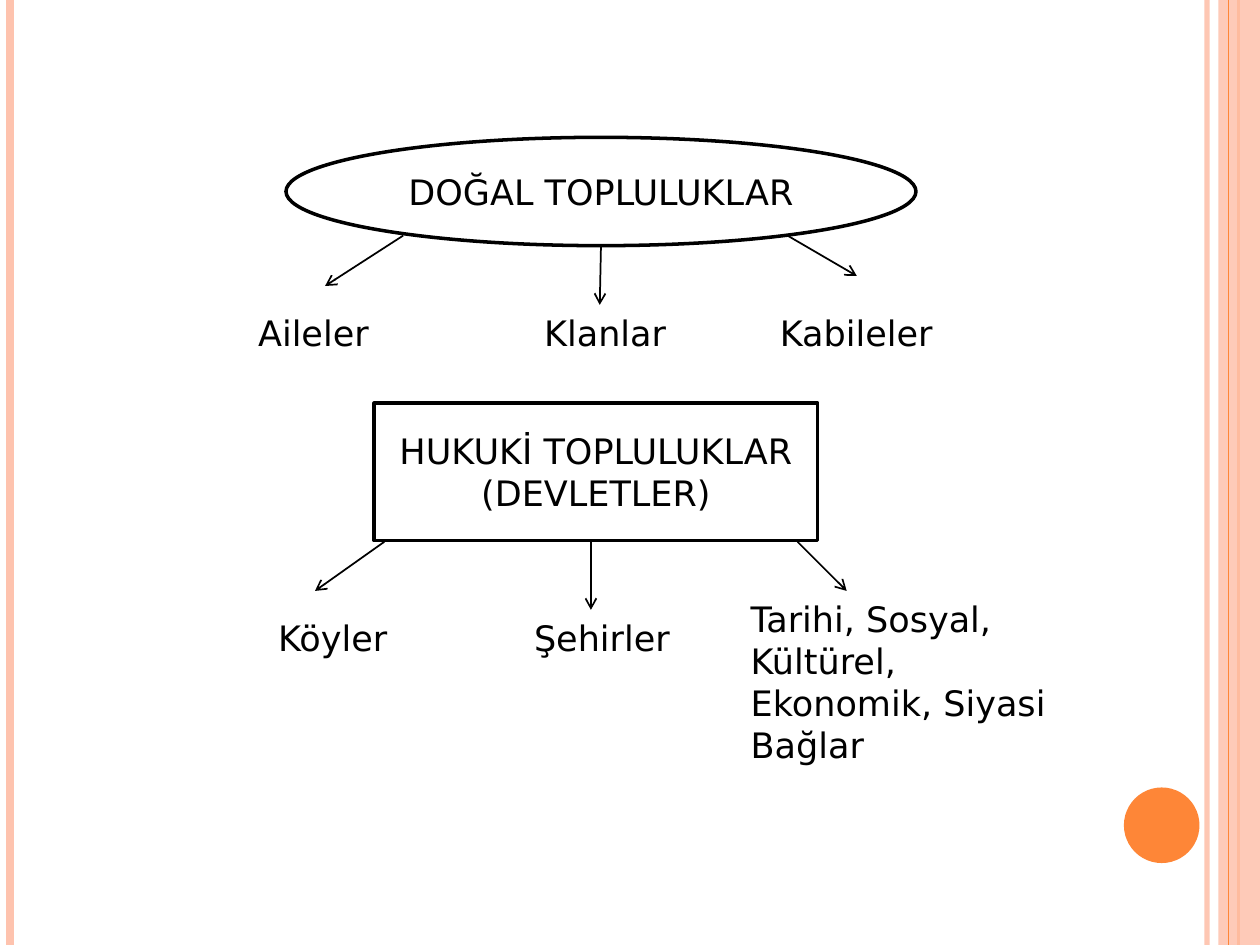
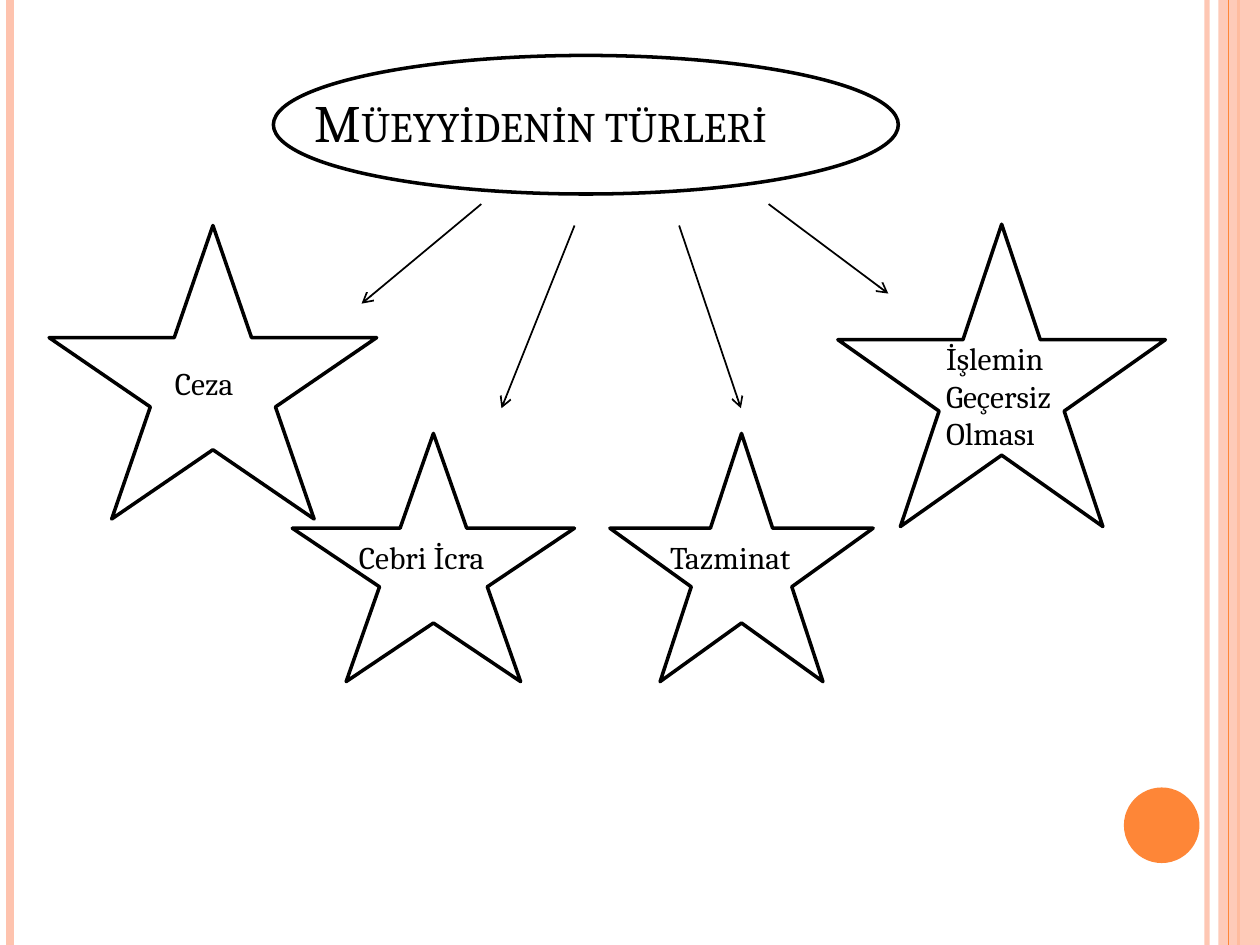
from typing import NamedTuple

from lxml import etree
from pptx import Presentation
from pptx.dml.color import RGBColor
from pptx.enum.lang import MSO_LANGUAGE_ID
from pptx.enum.shapes import MSO_CONNECTOR, MSO_SHAPE
from pptx.enum.text import MSO_ANCHOR, MSO_AUTO_SIZE, PP_ALIGN
from pptx.oxml.ns import qn
from pptx.util import Inches, Pt

OVAL, RECT, STAR = MSO_SHAPE.OVAL, MSO_SHAPE.RECTANGLE, MSO_SHAPE.STAR_5_POINT
STRAIGHT = MSO_CONNECTOR.STRAIGHT
CENTER = PP_ALIGN.CENTER
MIDDLE, BOTTOM = MSO_ANCHOR.MIDDLE, MSO_ANCHOR.BOTTOM
FIT_SHAPE = MSO_AUTO_SIZE.SHAPE_TO_FIT_TEXT
TURKISH = MSO_LANGUAGE_ID.TURKISH

WIDTH, HEIGHT = 10, 7.5
BLACK, WHITE, ORANGE, PEACH = "000000", "FFFFFF", "FE8637", "FEC3AE"
SANS, SERIF = "DejaVu Sans", "Cambria"


class Line(NamedTuple):
    x1: float
    y1: float
    x2: float
    y2: float
    color: str = BLACK
    weight: float = 1
    alpha: int = 100
    arrow: bool = True


class Shape(NamedTuple):
    kind: int
    x: float
    y: float
    w: float
    h: float
    fill: str | None = None
    line: str | None = BLACK
    alpha: int = 100
    text: str = ""


class Label(NamedTuple):
    text: str
    x: float
    y: float
    w: float
    h: float
    wrap: bool = False


def rgb(color: str) -> RGBColor:
    return RGBColor.from_string(color)


def set_alpha(sp_pr, percent: int) -> None:
    """Make the first colour of a shape or line see-through."""
    if percent < 100:
        color = sp_pr.find(".//" + qn("a:srgbClr"))
        etree.SubElement(color, qn("a:alpha")).set("val", str(percent * 1000))


def style_text(p, font: str, size: float) -> None:
    p.font.name, p.font.size = font, Pt(size)
    p.font.color.rgb = rgb(BLACK)


def draw_line(s, line: Line) -> None:
    ends = (Inches(v) for v in line[:4])
    cxn = s.shapes.add_connector(STRAIGHT, *ends)
    cxn.line.color.rgb = rgb(line.color)
    cxn.line.width = Pt(line.weight)
    sp_pr = cxn._element.spPr
    set_alpha(sp_pr, line.alpha)
    if line.arrow:
        etree.SubElement(cxn.line._get_or_add_ln(), qn("a:tailEnd")).set("type", "arrow")
    etree.SubElement(sp_pr, qn("a:effectLst"))


def draw_shape(s, shape: Shape) -> None:
    sp = s.shapes.add_shape(shape.kind, *(Inches(v) for v in shape[1:5]))
    sp.shadow.inherit = False
    if shape.fill:
        sp.fill.solid()
        sp.fill.fore_color.rgb = rgb(shape.fill)
        set_alpha(sp._element.spPr, shape.alpha)
    else:
        sp.fill.background()
    if shape.line:
        sp.line.color.rgb = rgb(shape.line)
        sp.line.width = Pt(2)
    else:
        sp.line.fill.background()
    if shape.text:
        tf = sp.text_frame
        tf.word_wrap, tf.vertical_anchor = True, MIDDLE
        p = tf.paragraphs[0]
        p.text, p.alignment = shape.text, CENTER
        style_text(p, SANS, 20)


def draw_label(s, label: Label, font: str, size: float) -> None:
    sp = s.shapes.add_textbox(*(Inches(v) for v in label[1:5]))
    tf = sp.text_frame
    tf.word_wrap, tf.auto_size = label.wrap, FIT_SHAPE
    tf.text = label.text
    for p in tf.paragraphs:
        style_text(p, font, size)


def draw_title(s, text: str) -> None:
    tf = s.shapes.add_textbox(Inches(2.4), Inches(0.01), Inches(5), Inches(1.25)).text_frame
    tf.word_wrap, tf.vertical_anchor = True, BOTTOM
    p = tf.paragraphs[0]
    style_text(p, SERIF, 30)
    r = p.add_run()
    r.text = text
    # Turkish casing gives the dotted capital İ in small caps
    r.font.language_id = TURKISH
    r._r.get_or_add_rPr().set("cap", "small")


def rule(x: float, color: str, weight: float, alpha: int = 100) -> Line:
    return Line(x, 0, x, HEIGHT, color, weight, alpha, arrow=False)


# Frame shared by all slides, back to front
FRAME = [
    rule(9.58, PEACH, 3, 93),
    rule(0.08, PEACH, 4.5),
    rule(9.83, ORANGE, 1.5),
    Shape(RECT, 9.67, 0, 0.33, HEIGHT, PEACH, None, 87),
    rule(9.75, ORANGE, 0.75),
    Shape(OVAL, 8.92, 6.25, 0.6, 0.6, ORANGE, None),
]

# Communities: two headings, each with three branches
COMMUNITY_PARTS = [
    Shape(OVAL, 2.27, 1.09, 5, 0.86, WHITE, text="DOĞAL TOPLULUKLAR"),
    Line(3.2, 1.87, 2.58, 2.27),
    Line(4.77, 1.95, 4.76, 2.42),
    Line(6.25, 1.87, 6.8, 2.19),
    Shape(RECT, 2.97, 3.2, 3.52, 1.09, WHITE, text="HUKUKİ TOPLULUKLAR (DEVLETLER)"),
    Line(3.05, 4.3, 2.5, 4.69),
    Line(4.69, 4.3, 4.69, 4.84),
    Line(6.33, 4.3, 6.72, 4.69),
]
COMMUNITY_LABELS = [
    Label("Aileler", 1.95, 2.42, 1.25, 0.44, True),
    Label("Klanlar", 4.22, 2.42, 1.72, 0.44, True),
    Label("Kabileler", 6.09, 2.42, 1.42, 0.44),
    Label("Köyler", 2.11, 4.84, 1.1, 0.44),
    Label("Şehirler", 4.14, 4.84, 1.3, 0.44),
    Label("Tarihi, Sosyal, Kültürel, Ekonomik, Siyasi Bağlar", 5.86, 4.69, 2.73, 1.45, True),
]

# Sanctions: one heading and four stars
SANCTION_PARTS = [
    Shape(OVAL, 2.17, 0.44, 4.96, 1.1),
    Shape(STAR, 0.39, 1.79, 2.6, 2.33),
    Shape(STAR, 2.32, 3.44, 2.24, 1.97),
    Shape(STAR, 6.65, 1.78, 2.6, 2.4),
    Shape(STAR, 4.84, 3.44, 2.09, 1.97),
    Line(3.82, 1.62, 2.87, 2.41),
    Line(4.56, 1.79, 3.98, 3.24),
    Line(5.39, 1.79, 5.88, 3.24),
    Line(6.1, 1.62, 7.05, 2.33),
]
SANCTION_LABELS = [
    Label("Ceza", 1.29, 2.84, 0.77, 0.4),
    Label("Cebri İcra", 2.75, 4.22, 1.38, 0.4),
    Label("Tazminat", 5.22, 4.22, 1.33, 0.4),
    Label("İşlemin\nGeçersiz\nOlması", 7.41, 2.64, 1.19, 1.01),
]


def add_slide(prs, parts: list, labels: list[Label], font: str, size: float, title: str = "") -> None:
    s = prs.slides.add_slide(prs.slide_layouts[6])
    for part in FRAME + parts:
        if isinstance(part, Line):
            draw_line(s, part)
        else:
            draw_shape(s, part)
    if title:
        draw_title(s, title)
    for label in labels:
        draw_label(s, label, font, size)


def main() -> None:
    prs = Presentation()
    prs.slide_width, prs.slide_height = Inches(WIDTH), Inches(HEIGHT)
    add_slide(prs, COMMUNITY_PARTS, COMMUNITY_LABELS, SANS, 20)
    add_slide(prs, SANCTION_PARTS, SANCTION_LABELS, SERIF, 18, "Müeyyidenin türleri")
    prs.save("out.pptx")


if __name__ == "__main__":
    main()
